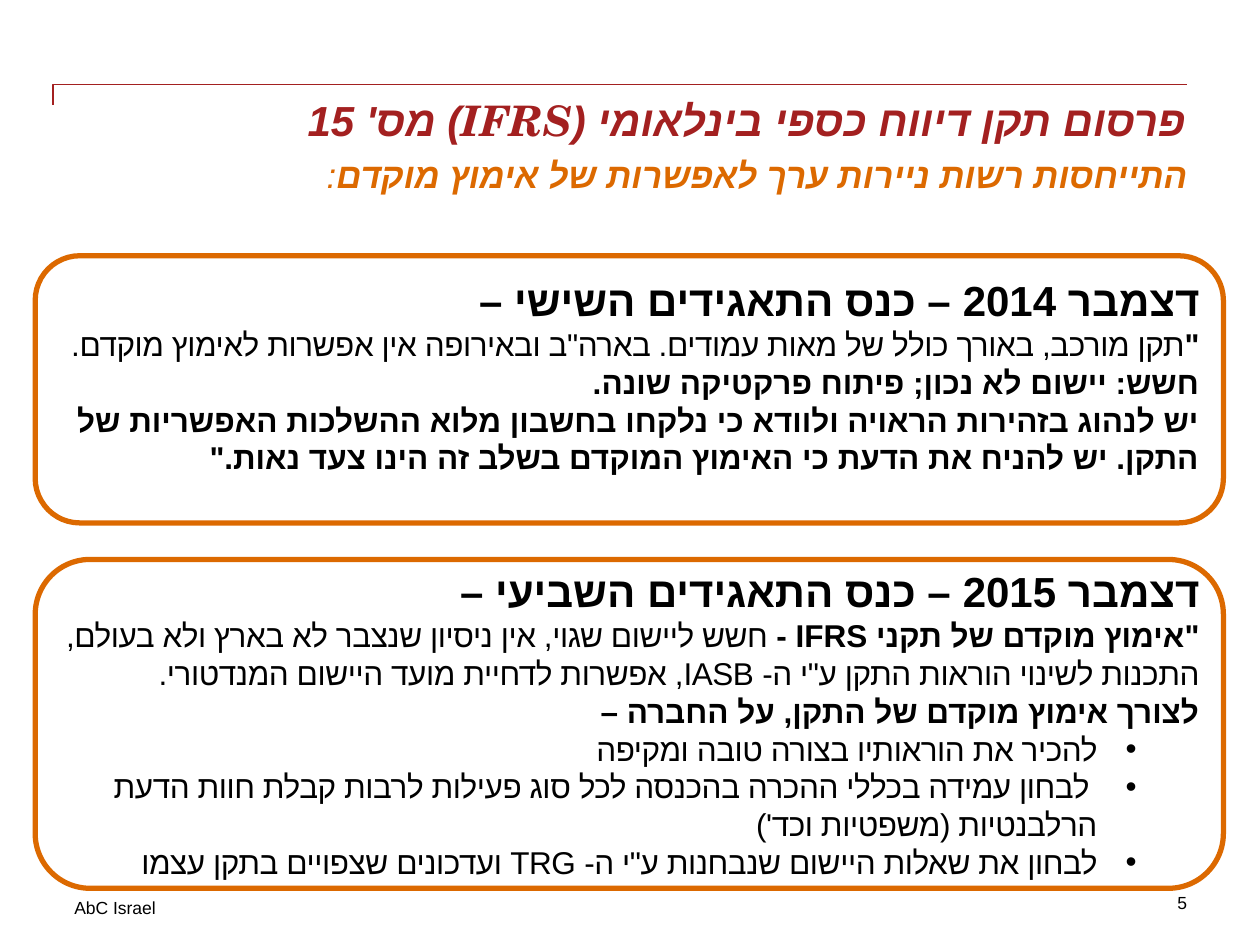
from lxml.etree import SubElement
from pptx import Presentation
from pptx.dml.color import RGBColor
from pptx.enum.shapes import MSO_SHAPE as Shape
from pptx.enum.text import MSO_ANCHOR as Anchor, PP_ALIGN as Align
from pptx.oxml.ns import qn
from pptx.util import Inches, Pt

RED, ORANGE, BLACK, WHITE = "A32020", "DC6900", "000000", "FFFFFF"
SANS, SERIF, MONO = "Arial", "TeX Gyre Schola", "Noto Sans Mono"
TIGHT = "-25"  # letter spacing of light body text, in hundredths of a point

# Each run: text, size, font, bold
TITLE = [("פרסום תקן דיווח כספי בינלאומי (IFRS) ", 24, SERIF, True),
         ("מס' 15", 24, SANS, True)]
LEAD = [("התייחסות רשות ניירות ערך לאפשרות של אימוץ מוקדם", 20, SANS, True),
        (":", 20, SANS, False)]
# Each card: card top and height, text top, paragraphs, bullets
CARDS = [
    (2.03, 2.12, 2.18, [
        [("דצמבר 2014 – כנס התאגידים השישי – ", 24, MONO, True)],
        [('"', 18, MONO, True),
         ('תקן מורכב, באורך כולל של מאות עמודים. בארה"ב ובאירופה אין אפשרות לאימוץ מוקדם.',
          18, SANS, False)],
        [("חשש: יישום לא נכון; פיתוח פרקטיקה שונה.", 18, SANS, True)],
        [("יש לנהוג בזהירות הראויה ולוודא כי נלקחו בחשבון מלוא ההשלכות האפשריות של התקן. "
          'יש להניח את הדעת כי האימוץ המוקדם בשלב זה הינו צעד נאות."', 18, SANS, True)],
    ], []),
    (4.44, 2.61, 4.49, [
        [("דצמבר 2015 – כנס התאגידים השביעי – ", 24, MONO, True)],
        [('"', 18, MONO, True),
         ("אימוץ מוקדם של תקני IFRS - ", 18, SANS, True),
         ("חשש ליישום שגוי, אין ניסיון שנצבר לא בארץ ולא בעולם, התכנות לשינוי הוראות "
          'התקן ע"י ה- IASB, אפשרות לדחיית מועד היישום המנדטורי.', 18, SANS, False)],
        [("לצורך אימוץ מוקדם של התקן, על החברה – ", 18, SANS, True)],
    ], [
        "להכיר את הוראותיו בצורה טובה ומקיפה",
        " לבחון עמידה בכללי ההכרה בהכנסה לכל סוג פעילות לרבות קבלת חוות הדעת "
        "הרלבנטיות (משפטיות וכד')",
        'לבחון את שאלות היישום שנבחנות ע"י ה- TRG ועדכונים שצפויים בתקן עצמו',
    ]),
]


def paint(fmt, color):
    fmt.solid()
    fmt.fore_color.rgb = RGBColor.from_string(color)


def place(shape, *box):
    shape.left, shape.top, shape.width, shape.height = map(Inches, box)


def write(para, runs, color=BLACK, italic=False, align=Align.RIGHT):
    """Fill a right-to-left paragraph with formatted runs."""
    para.alignment = align
    para._p.get_or_add_pPr().set("rtl", "1")
    for text, size, face, bold in runs:
        run = para.add_run()
        run.text = text
        font = run.font
        font.size, font.name = Pt(size), face
        font.bold, font.italic = bold, italic
        paint(font.fill, color)
        props = run._r.get_or_add_rPr()
        SubElement(props, qn("a:cs"), typeface=SANS)
        if size == 18 and not bold:
            props.set("spc", TIGHT)


def bullet(para):
    para.level = 1
    props = para._p.get_or_add_pPr()
    props.set("marL", str(Inches(0.81)))
    props.set("indent", str(Inches(-0.31)))
    SubElement(props, qn("a:buFont"), typeface=SANS)
    SubElement(props, qn("a:buChar"), char="•")


def trim(frame):
    frame.margin_left = frame.margin_right = 0
    frame.margin_top = frame.margin_bottom = 0
    frame.vertical_anchor = Anchor.TOP
    frame.word_wrap = True
    return frame


def add_text(shapes, box, paras, **style):
    frame = trim(shapes.add_textbox(*map(Inches, box)).text_frame)
    for i, runs in enumerate(paras):
        para = frame.add_paragraph() if i else frame.paragraphs[0]
        write(para, runs, **style)
    return frame


def add_rule(shapes):
    pen = shapes.build_freeform(Inches(0.42), Inches(0.83))
    pen.add_line_segments([(Inches(x), Inches(0.67)) for x in (0.42, 9.42)], close=False)
    rule = pen.convert_to_shape()
    rule.fill.background()
    rule.shadow.inherit = False
    paint(rule.line.fill, RED)
    rule.line.width = Pt(1)


def add_card(shapes, top, height, text_top, paras, points):
    card = shapes.add_shape(Shape.ROUNDED_RECTANGLE,
                            *map(Inches, (0.28, top, 9.43, height)))
    card.shadow.inherit = False
    paint(card.fill, WHITE)
    paint(card.line.fill, ORANGE)
    card.line.width = Pt(3)
    frame = add_text(shapes, (0.28, text_top, 9.24, 2.81), paras)
    for point in points:
        para = frame.add_paragraph()
        write(para, [(point, 18, SANS, False)])
        bullet(para)


def main():
    deck = Presentation()
    deck.slide_width, deck.slide_height = Inches(10), Inches(7.5)
    slide = deck.slides.add_slide(deck.slide_layouts[5])
    shapes = slide.shapes

    title = shapes.title
    place(title, 0.58, 0.75, 8.83, 0.64)
    write(trim(title.text_frame).paragraphs[0], TITLE, RED, True)

    add_text(shapes, (0.59, 7.12, 1.65, 0.17), [[("AbC Israel", 10, SANS, False)]],
             align=Align.LEFT)
    add_rule(shapes)
    add_text(shapes, (9.18, 7.08, 0.24, 0.17), [[("5", 10, SERIF, False)]])
    add_text(shapes, (0.72, 1.22, 8.71, 0.74), [LEAD], color=ORANGE, italic=True)
    for card in CARDS:
        add_card(shapes, *card)
    deck.save("out.pptx")


if __name__ == "__main__":
    main()
